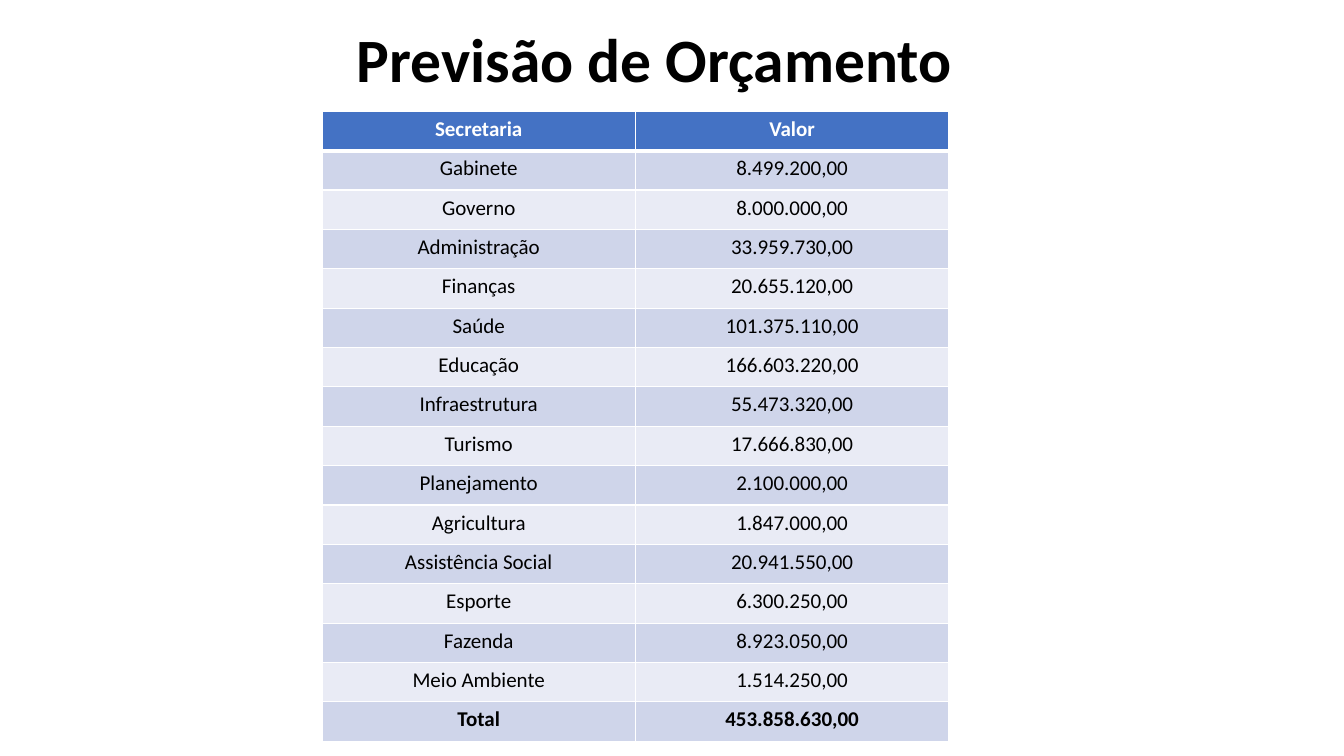
"""Builds the budget forecast slide with one table."""
from dataclasses import dataclass

from lxml.etree import SubElement
from pptx import Presentation
from pptx.dml.color import RGBColor as Color
from pptx.enum.text import MSO_ANCHOR as Anchor, MSO_AUTO_SIZE as AutoSize, PP_ALIGN as Align
from pptx.oxml.ns import qn
from pptx.util import Pt


@dataclass(frozen=True)
class Theme:
    """Colours, font and type sizes of the slide."""
    font: str = "Calibri"
    title_size: float = 44
    cell_size: float = 15
    ink: str = "000000"
    paper: str = "FFFFFF"
    header: str = "4472C4"
    bands: tuple = ("E9EBF5", "CFD5EA")
    rule: float = 1
    header_rule: float = 3


THEME = Theme()
HEADINGS = ("Secretaria", "Valor")
BUDGET = [
    ("Gabinete", "8.499.200,00"),
    ("Governo", "8.000.000,00"),
    ("Administração", "33.959.730,00"),
    ("Finanças", "20.655.120,00"),
    ("Saúde", "101.375.110,00"),
    ("Educação", "166.603.220,00"),
    ("Infraestrutura", "55.473.320,00"),
    ("Turismo", "17.666.830,00"),
    ("Planejamento", "2.100.000,00"),
    ("Agricultura", "1.847.000,00"),
    ("Assistência Social", "20.941.550,00"),
    ("Esporte", "6.300.250,00"),
    ("Fazenda", "8.923.050,00"),
    ("Meio Ambiente", "1.514.250,00"),
]
TOTAL = ("Total", "453.858.630,00")


def add_text(paragraph, words, size, colour, bold):
    """Add one formatted run to the paragraph."""
    run = paragraph.add_run()
    run.text = words
    run.font.name = THEME.font
    run.font.size = Pt(size)
    run.font.bold = bold
    run.font.color.rgb = Color.from_string(colour)


def add_borders(cell, top, bottom):
    """Draw solid rules on the four sides of the cell."""
    properties = cell._tc.get_or_add_tcPr()
    widths = {"L": THEME.rule, "R": THEME.rule, "T": top, "B": bottom}
    for side, width in widths.items():
        line = SubElement(properties, qn(f"a:ln{side}"), w=str(Pt(width)))
        SubElement(SubElement(line, qn("a:solidFill")), qn("a:srgbClr"), val=THEME.paper)


def fill_title(slide, left, top, width, height):
    """Place the heading in the title placeholder."""
    heading = slide.shapes.title
    heading.left, heading.top = Pt(left), Pt(top)
    heading.width, heading.height = Pt(width), Pt(height)
    frame = heading.text_frame
    frame.word_wrap = True
    frame.auto_size = AutoSize.NONE
    frame.vertical_anchor = Anchor.MIDDLE
    paragraph = frame.paragraphs[0]
    paragraph.alignment = Align.LEFT
    paragraph.line_spacing = 0.9
    add_text(paragraph, "Previsão de Orçamento", THEME.title_size, THEME.ink, True)


def add_budget(slide, left, top, width, height):
    """Add the budget table with banded rows and a bold total."""
    rows = [HEADINGS, *BUDGET, TOTAL]
    budget = slide.shapes.add_table(
        len(rows), len(HEADINGS), Pt(left), Pt(top), Pt(width), Pt(height)).table
    for row_number, entries in enumerate(rows):
        is_header = row_number == 0
        above = THEME.header_rule if row_number == 1 else THEME.rule
        below = THEME.header_rule if is_header else THEME.rule
        fill = THEME.header if is_header else THEME.bands[row_number % 2]
        ink = THEME.paper if is_header else THEME.ink
        for column, words in enumerate(entries):
            cell = budget.cell(row_number, column)
            add_borders(cell, above, below)
            cell.fill.solid()
            cell.fill.fore_color.rgb = Color.from_string(fill)
            paragraph = cell.text_frame.paragraphs[0]
            paragraph.alignment = Align.CENTER
            add_text(paragraph, words, THEME.cell_size, ink, is_header or entries is TOTAL)


def main():
    """Build the slide and save it."""
    deck = Presentation()
    deck.slide_width, deck.slide_height = Pt(960), Pt(540)
    slide = deck.slides.add_slide(deck.slide_layouts[5])
    fill_title(slide, 247.7, 11.5, 447.8, 66.2)
    add_budget(slide, 230, 79.5, 447.8, 450)
    deck.save("out.pptx")


if __name__ == "__main__":
    main()
